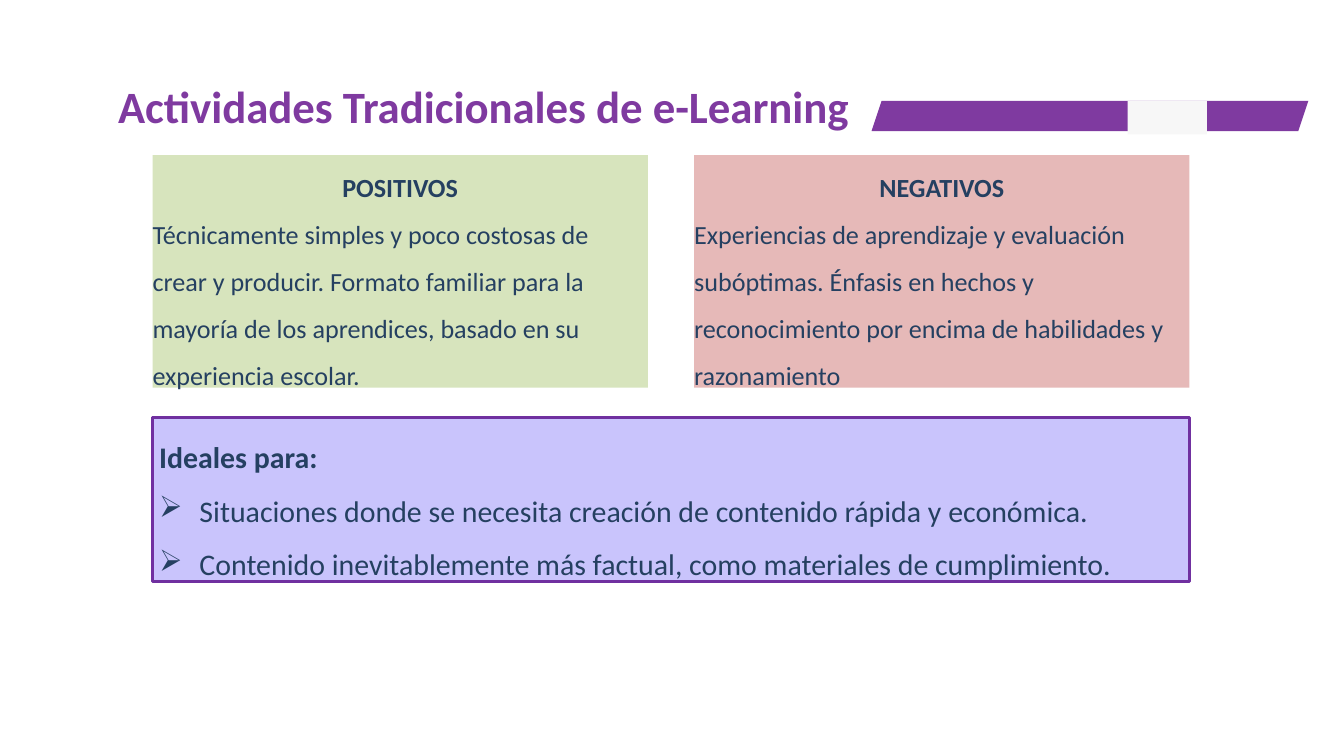
import dataclasses

import lxml.etree
import pptx
import pptx.dml.color
import pptx.enum.shapes
import pptx.enum.text
import pptx.oxml.ns
import pptx.util

SCALE = 9144
ALIGN = pptx.enum.text.PP_ALIGN


@dataclasses.dataclass(frozen=True)
class Theme:
    """Colours, type sizes and font of the slide."""
    font: str = "Calibri"
    purple: str = "7F3AA0"
    gap: str = "F7F7F7"
    ink: str = "254061"
    green: str = "D7E4BD"
    red: str = "E6B9B8"
    lilac: str = "C9C4FC"
    edge: str = "7030A0"
    title: int = 48
    body: int = 28
    ideal: int = 32


THEME = Theme()


def px(num):
    """Turn px into EMU."""
    return pptx.util.Emu(num * SCALE)


def rgb(code):
    """Turn a hex code into a colour."""
    return pptx.dml.color.RGBColor.from_string(code)


def paint(shape, fill, edge=None):
    """Set fill and outline and drop the shadow."""
    shape.shadow.inherit = False
    shape.fill.solid()
    shape.fill.fore_color.rgb = rgb(fill)
    if edge:
        shape.line.color.rgb = rgb(edge)
        shape.line.width = pptx.util.Pt(2.75)
    else:
        shape.line.fill.background()


def add_rect(slide, area, fill, edge=None):
    """Add a filled rectangle."""
    kind = pptx.enum.shapes.MSO_SHAPE.RECTANGLE
    shape = slide.shapes.add_shape(kind, *map(px, area))
    paint(shape, fill, edge)
    return shape


def add_run(para, text, size, color, bold=False):
    """Add one styled run."""
    run = para.add_run()
    run.text = text
    run.font.name = THEME.font
    run.font.size = pptx.util.Pt(size)
    run.font.bold = bold
    run.font.color.rgb = rgb(color)


def add_bullet(para, indent):
    """Give a paragraph an arrow bullet with a hanging indent."""
    props = para._p.get_or_add_pPr()
    props.set("marL", str(px(indent)))
    props.set("indent", str(px(-indent)))
    mark = lxml.etree.SubElement(props, pptx.oxml.ns.qn("a:buChar"))
    mark.set("char", "➢")


def fill_text(shape, head, lines, size, align=ALIGN.LEFT, indent=0):
    """Write a bold heading and the lines below it."""
    frame = shape.text_frame
    frame.word_wrap = True
    frame.auto_size = pptx.enum.text.MSO_AUTO_SIZE.SHAPE_TO_FIT_TEXT
    frame.vertical_anchor = pptx.enum.text.MSO_ANCHOR.TOP
    for num, text in enumerate([head, *lines]):
        para = frame.add_paragraph() if num else frame.paragraphs[0]
        if num and indent:
            add_bullet(para, indent)
        para.alignment = ALIGN.LEFT if num else align
        para.line_spacing = 1.5
        add_run(para, text, size, THEME.ink, bold=not num)


def add_band(slide):
    """Draw the slanted band with its pale gap."""
    pen = slide.shapes.build_freeform(1312, 150, scale=SCALE)
    pen.add_line_segments([(1947, 150), (1932, 195), (1297, 195)])
    paint(pen.convert_to_shape(), THEME.purple)
    add_rect(slide, (1678, 150, 118, 50), THEME.gap)


def add_title(slide, text):
    """Add the slide title."""
    box = slide.shapes.add_textbox(*map(px, (166, 112, 1126, 146)))
    box.text_frame.word_wrap = True
    add_run(box.text_frame.paragraphs[0], text, THEME.title, THEME.purple, True)


def add_card(slide, left, fill, head, text):
    """Add a coloured card with a centred heading."""
    card = add_rect(slide, (left, 231, 737, 346), fill)
    frame = card.text_frame
    frame.margin_left = frame.margin_right = 0
    frame.margin_top = frame.margin_bottom = 0
    fill_text(card, head, [text], THEME.body, ALIGN.CENTER)


def add_panel(slide, head, items):
    """Add the outlined panel with a bulleted list."""
    panel = add_rect(slide, (227, 621, 1543, 244), THEME.lilac, THEME.edge)
    fill_text(panel, head, items, THEME.ideal, indent=60)


def main():
    """Build and save the slide."""
    deck = pptx.Presentation()
    deck.slide_width, deck.slide_height = px(2000), px(1125)
    slide = deck.slides.add_slide(deck.slide_layouts[6])
    add_band(slide)
    add_title(slide, "Actividades Tradicionales de e-Learning")
    cards = [
        (THEME.green, "POSITIVOS",
         "Técnicamente simples y poco costosas de crear y producir. "
         "Formato familiar para la mayoría de los aprendices, "
         "basado en su experiencia escolar."),
        (THEME.red, "NEGATIVOS",
         "Experiencias de aprendizaje y evaluación subóptimas. "
         "Énfasis en hechos y reconocimiento por encima de "
         "habilidades y razonamiento"),
    ]
    for num, card in enumerate(cards):
        add_card(slide, 227 + num * 806, *card)
    add_panel(slide, "Ideales para:", [
        "Situaciones donde se necesita creación de contenido rápida y económica.",
        "Contenido inevitablemente más factual, como materiales de cumplimiento.",
    ])
    deck.save("out.pptx")


if __name__ == "__main__":
    main()
